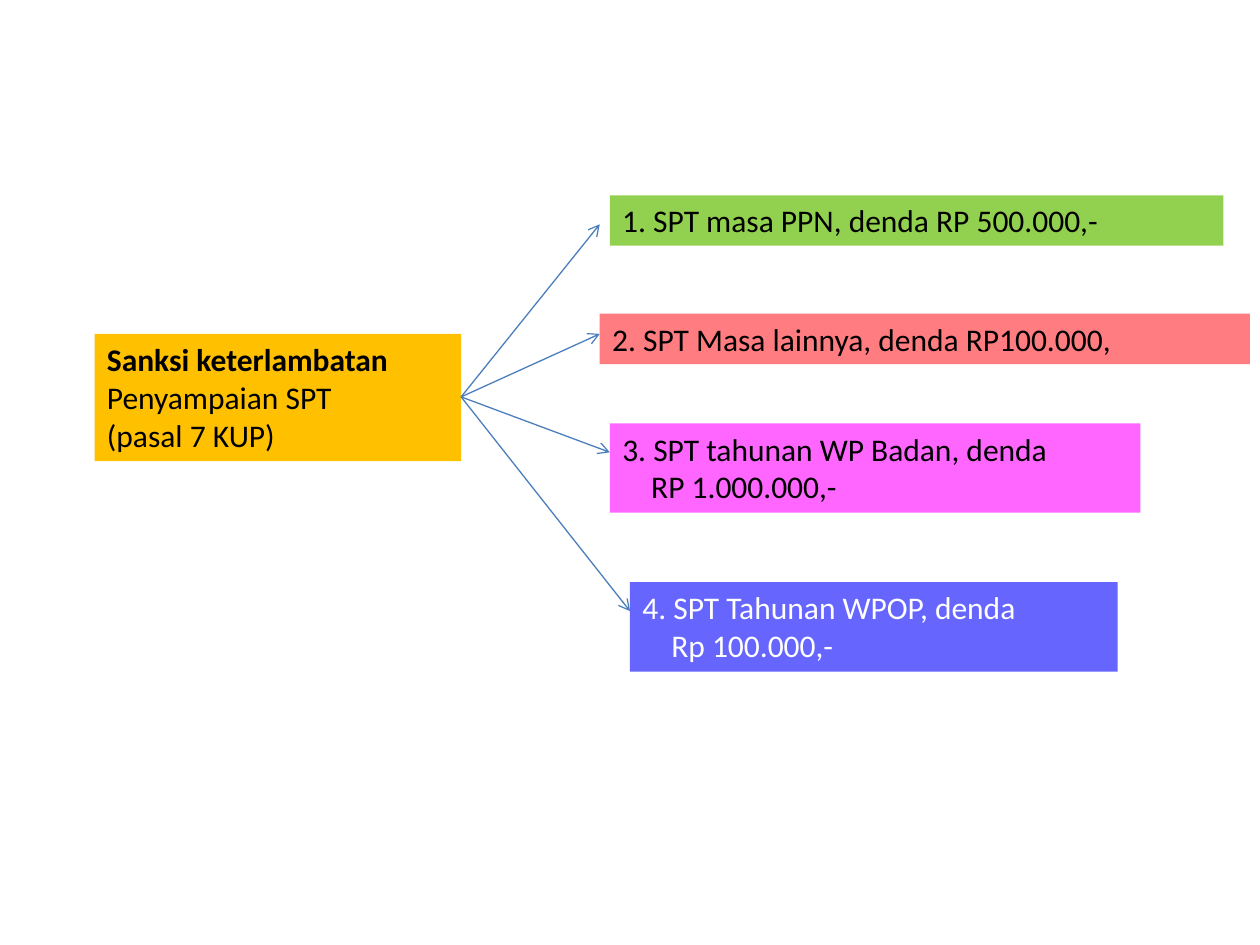
from lxml import etree
from pptx import Presentation
from pptx import util as u
from pptx.dml.color import RGBColor
from pptx.enum import shapes, text
from pptx.oxml.ns import qn

BLACK = RGBColor(0x00, 0x00, 0x00)
WHITE = RGBColor(0xFF, 0xFF, 0xFF)
AMBER = RGBColor(0xFF, 0xC0, 0x00)
GREEN = RGBColor(0x92, 0xD0, 0x50)
CORAL = RGBColor(0xFF, 0x7C, 0x80)
PINK = RGBColor(0xFF, 0x66, 0xFF)
VIOLET = RGBColor(0x66, 0x66, 0xFF)
ARROW_BLUE = RGBColor(0x4B, 0x7E, 0xBC)

TOPIC_BOX = (0.75, 2.65, 2.91, 1.01)
ARROW_START = (3.66, 3.15)
PENALTIES = [
    ((4.84, 1.55, 4.87, 0.4), GREEN, BLACK, (4.76, 1.78),
     ["1. SPT masa PPN, denda RP 500.000,-"]),
    ((4.76, 2.49, 5.16, 0.4), CORAL, BLACK, (4.76, 2.65),
     ["2. SPT Masa lainnya, denda RP100.000,"]),
    ((4.84, 3.36, 4.21, 0.71), PINK, BLACK, (4.84, 3.59),
     ["3. SPT tahunan WP Badan, denda", "RP 1.000.000,-"]),
    ((5, 4.62, 3.87, 0.71), VIOLET, WHITE, (5, 4.85),
     ["4. SPT Tahunan WPOP, denda", "Rp 100.000,-"]),
]


def add_label(slide, box, fill, color, lines):
    """Place a filled text box and return its paragraphs."""
    shape = slide.shapes.add_textbox(*map(u.Inches, box))
    shape.fill.solid()
    shape.fill.fore_color.rgb = fill
    frame = shape.text_frame
    frame.word_wrap = True
    frame.auto_size = text.MSO_AUTO_SIZE.NONE
    frame.text = "\n".join(lines)
    for paragraph in frame.paragraphs:
        paragraph.font.name = "Calibri"
        paragraph.font.size = u.Pt(18)
        paragraph.font.color.rgb = color
    return frame.paragraphs


def add_arrow(slide, start, end):
    """Draw a thin arrow with an open head at its end."""
    arrow = slide.shapes.add_connector(
        shapes.MSO_CONNECTOR.STRAIGHT, *map(u.Inches, start + end))
    arrow.line.color.rgb = ARROW_BLUE
    arrow.line.width = u.Pt(0.75)
    etree.SubElement(arrow.line._get_or_add_ln(), qn("a:tailEnd"), type="arrow")
    etree.SubElement(arrow._element.spPr, qn("a:effectLst"))


def add_topic(slide, box):
    """Place the topic box with its bold first line."""
    lines = ["Sanksi keterlambatan", "Penyampaian SPT", "(pasal 7 KUP)"]
    paragraphs = add_label(slide, box, AMBER, BLACK, lines)
    paragraphs[0].font.bold = True


def add_penalty(slide, box, fill, color, arrow_end, lines):
    """Place one penalty with its arrow and indented second line."""
    add_arrow(slide, ARROW_START, arrow_end)
    for paragraph in add_label(slide, box, fill, color, lines)[1:]:
        paragraph._p.get_or_add_pPr().set("marL", str(u.Inches(0.23)))


def main():
    """Build and save the slide."""
    presentation = Presentation()
    presentation.slide_width = u.Inches(10)
    presentation.slide_height = u.Inches(7.5)
    slide = presentation.slides.add_slide(presentation.slide_layouts[6])
    add_topic(slide, TOPIC_BOX)
    for penalty in PENALTIES:
        add_penalty(slide, *penalty)
    presentation.save("out.pptx")


if __name__ == "__main__":
    main()
